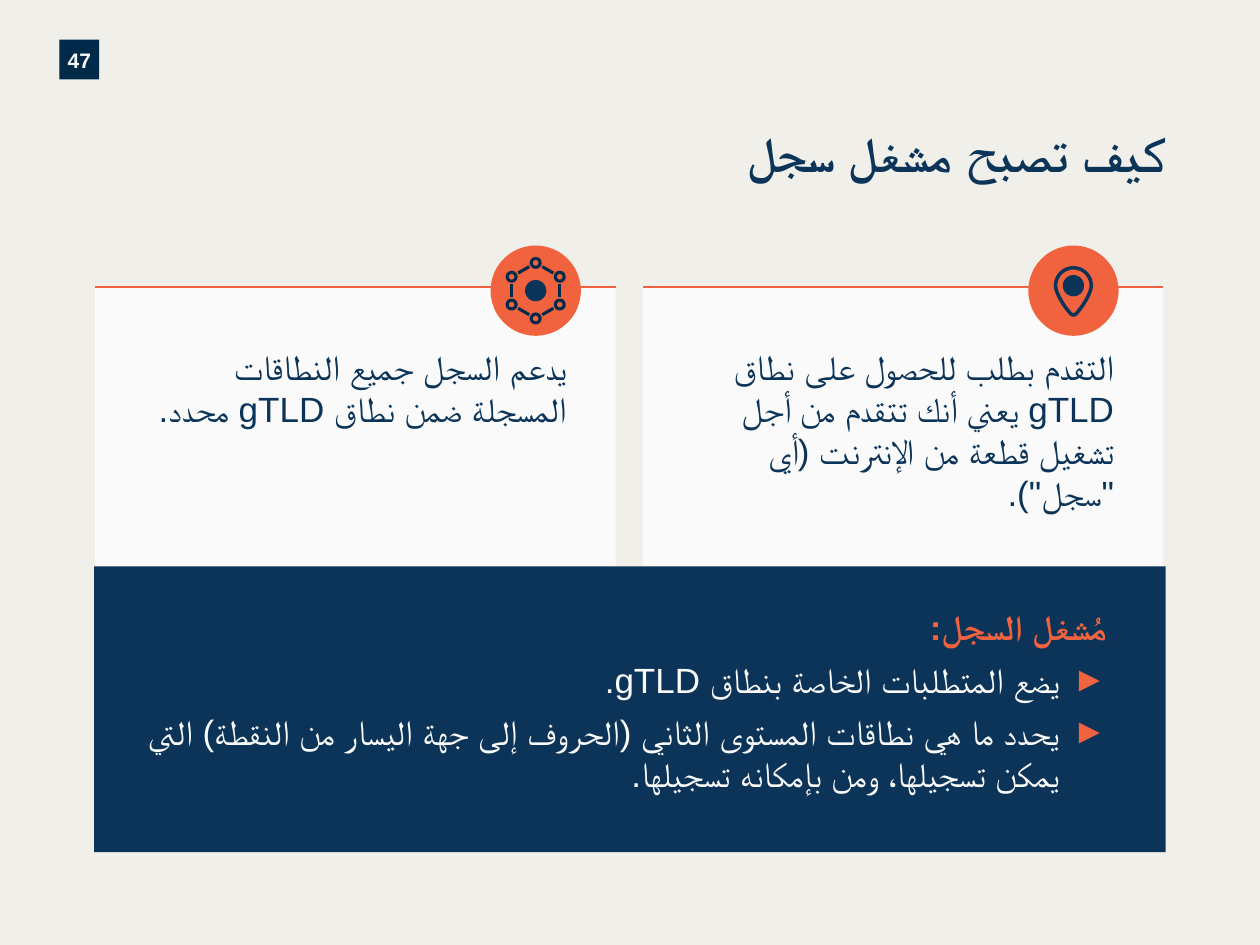
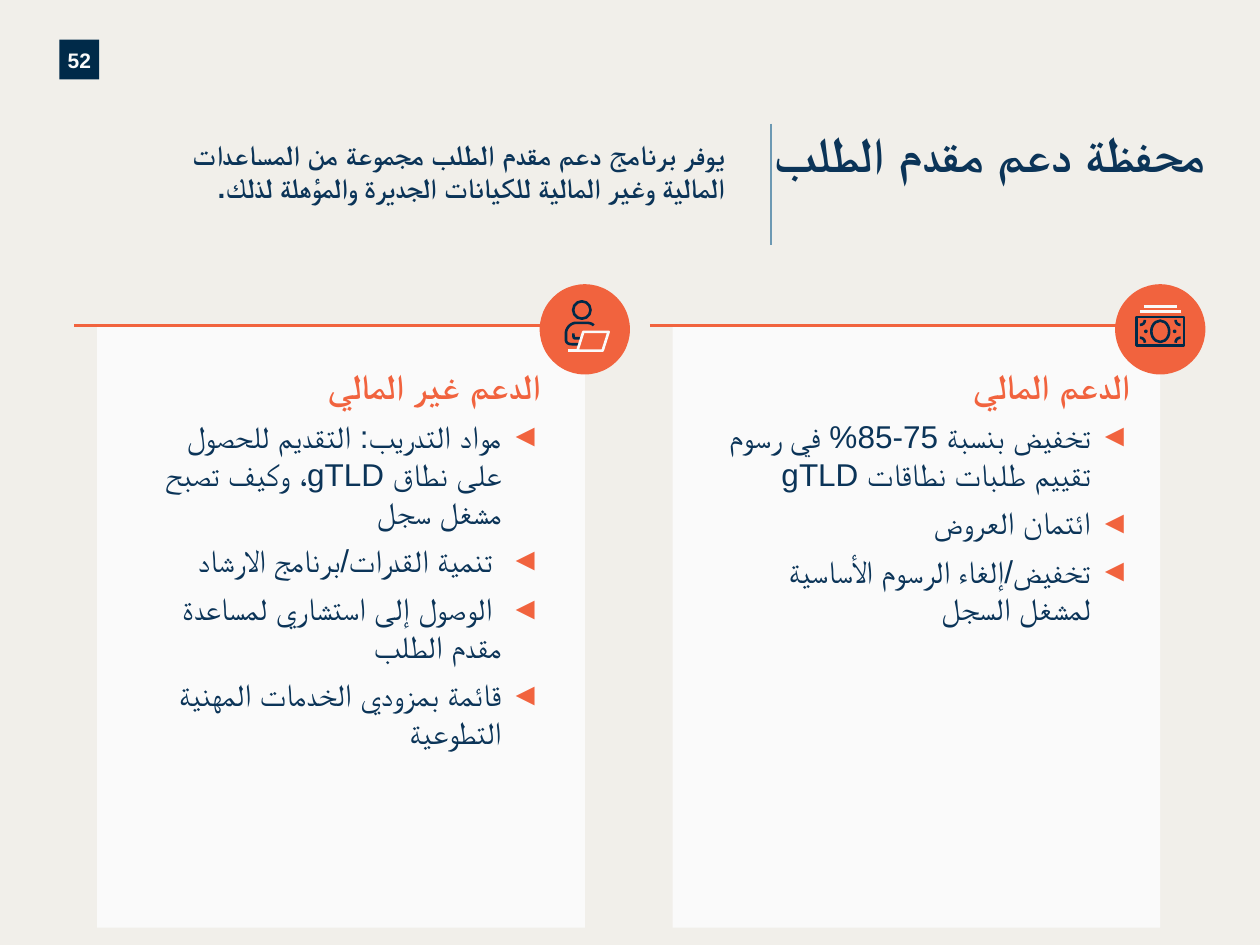
from dataclasses import dataclass
from math import cos, pi, sin

from lxml.etree import SubElement
from pptx import Presentation
from pptx.dml.color import RGBColor
from pptx.enum.shapes import MSO_CONNECTOR, MSO_SHAPE
from pptx.enum.text import MSO_ANCHOR, PP_ALIGN
from pptx.oxml.ns import qn
from pptx.util import Cm, Pt

PAPER = RGBColor(0xF1, 0xEF, 0xEA)
WHITE = RGBColor(0xFA, 0xFA, 0xFA)
NAVY = RGBColor(0x0B, 0x34, 0x58)
INK = RGBColor(0x00, 0x2A, 0x49)
ORANGE = RGBColor(0xF1, 0x63, 0x3E)
STEEL = RGBColor(0x6D, 0x99, 0xB3)
FONT = "Arial"
BADGE_SIZE = 1.82
BADGE_DROP = 0.08


@dataclass
class Box:
    """A rectangle in centimetres."""
    left: float
    top: float
    width: float
    height: float

    @property
    def right(self):
        return self.left + self.width

    def lengths(self):
        return [Cm(n) for n in (self.left, self.top, self.width, self.height)]


@dataclass
class Line:
    """One Arabic paragraph and its look."""
    text: str
    size: int = 20
    colour: RGBColor = NAVY
    bold: bool = False
    bullet: str = ""
    hang: float = 0


def paint(shape, fill=None, line=None, weight=1.5):
    shape.shadow.inherit = False
    if fill is None:
        shape.fill.background()
    else:
        shape.fill.solid()
        shape.fill.fore_color.rgb = fill
    if line is None:
        shape.line.fill.background()
    else:
        shape.line.color.rgb = line
        shape.line.width = Pt(weight)


def add_shape(page, kind, box, **look):
    shape = page.shapes.add_shape(kind, *box.lengths())
    paint(shape, **look)
    return shape


def add_oval(page, x, y, width, height=None, **look):
    """An ellipse centred on x, y."""
    height = height or width
    box = Box(x - width / 2, y - height / 2, width, height)
    return add_shape(page, MSO_SHAPE.OVAL, box, **look)


def add_line(page, start, end, colour, weight=1.25):
    line = page.shapes.add_connector(
        MSO_CONNECTOR.STRAIGHT, *(Cm(n) for n in (*start, *end)))
    line.line.color.rgb = colour
    line.line.width = Pt(weight)
    SubElement(line._element.spPr, qn("a:effectLst"))


def curve(*controls, steps=10):
    """Points along a cubic curve through four control points."""
    points = []
    for step in range(steps + 1):
        t = step / steps
        weights = ((1 - t) ** 3, 3 * t * (1 - t) ** 2, 3 * t * t * (1 - t), t ** 3)
        points.append(tuple(sum(w * point[axis] for w, point in zip(weights, controls))
                            for axis in (0, 1)))
    return points


def add_outline(page, x, y, points, colour, weight=1.5, close=False):
    """An unfilled path whose points are offsets from x, y."""
    places = [(Cm(x + dx), Cm(y + dy)) for dx, dy in points]
    builder = page.shapes.build_freeform(*places[0])
    builder.add_line_segments(places[1:], close=close)
    paint(builder.convert_to_shape(), line=colour, weight=weight)


def set_insets(frame, left, top, right, bottom):
    frame.margin_left, frame.margin_top = Cm(left), Cm(top)
    frame.margin_right, frame.margin_bottom = Cm(right), Cm(bottom)
    frame.word_wrap = True


def add_bullet(para, line):
    props = para._p.get_or_add_pPr()
    props.set("marL", str(Cm(line.hang)))
    props.set("indent", str(-Cm(line.hang)))
    para.space_before = Pt(6)
    colour = SubElement(props, qn("a:buClr"))
    SubElement(colour, qn("a:srgbClr")).set("val", str(ORANGE))
    SubElement(props, qn("a:buFont")).set("typeface", FONT)
    SubElement(props, qn("a:buChar")).set("char", line.bullet)


def write(frame, lines, insets=(0, 0, 0, 0)):
    """Fill a frame with right-to-left paragraphs."""
    set_insets(frame, *insets)
    frame.vertical_anchor = MSO_ANCHOR.TOP
    for index, line in enumerate(lines):
        para = frame.add_paragraph() if index else frame.paragraphs[0]
        para.text = line.text
        para.alignment = PP_ALIGN.RIGHT
        para._p.get_or_add_pPr().set("rtl", "1")
        if line.bullet:
            add_bullet(para, line)
        for span in para.runs:
            font = span.font
            font.name, font.size, font.bold = FONT, Pt(line.size), line.bold
            font.color.rgb = line.colour
            SubElement(font._element, qn("a:cs")).set("typeface", FONT)


def add_text(page, box, line):
    write(page.shapes.add_textbox(*box.lengths()).text_frame, [line])


def add_page(deck, number):
    page = deck.slides.add_slide(deck.slide_layouts[6])
    page.background.fill.solid()
    page.background.fill.fore_color.rgb = PAPER
    marker = add_shape(page, MSO_SHAPE.RECTANGLE, Box(1.2, 0.8, 0.8, 0.8), fill=INK)
    frame = marker.text_frame
    set_insets(frame, 0, 0, 0, 0)
    frame.vertical_anchor = MSO_ANCHOR.MIDDLE
    frame.text = str(number)
    para = frame.paragraphs[0]
    para.alignment = PP_ALIGN.CENTER
    para.line_spacing = 1.08
    font = para.runs[0].font
    font.name, font.size, font.bold = FONT, Pt(12), True
    font.color.rgb = WHITE
    return page


def add_title(page, box, text):
    add_text(page, box, Line(text, 28, bold=True))


def add_panel(page, box, fill, lines, insets):
    panel = add_shape(page, MSO_SHAPE.RECTANGLE, box, fill=fill)
    write(panel.text_frame, lines, insets)


def add_card(page, box, lines, insets, draw_icon, badge_inset=0, overhang=0):
    """A white panel with an orange rule on top and a round badge near its right end."""
    add_panel(page, box, WHITE, lines, insets)
    add_line(page, (box.left - overhang, box.top), (box.right, box.top), ORANGE)
    x, y = box.right - badge_inset, box.top + BADGE_DROP
    add_oval(page, x, y, BADGE_SIZE, fill=ORANGE)
    draw_icon(page, x, y)


def draw_network(page, x, y):
    nodes = [(x + 0.56 * sin(k * pi / 3), y - 0.56 * cos(k * pi / 3)) for k in range(6)]
    for (ax, ay), (bx, by) in zip(nodes, nodes[1:] + nodes[:1]):
        start, end = [(ax + (bx - ax) * part, ay + (by - ay) * part)
                      for part in (0.27, 0.73)]
        add_line(page, start, end, INK, 1.75)
    for node in nodes:
        add_oval(page, *node, 0.18, line=INK, weight=1.75)
    add_oval(page, x, y, 0.43, fill=NAVY)


def draw_pin(page, x, y):
    add_oval(page, x, y - 0.1, 0.43, fill=NAVY)
    left_half = (curve((0, 0.49), (-0.02, 0.49), (-0.04, 0.48), (-0.06, 0.46))
                 + curve((-0.06, 0.46), (-0.18, 0.33), (-0.36, 0.05), (-0.36, -0.1))
                 + curve((-0.36, -0.1), (-0.36, -0.3), (-0.2, -0.46), (0, -0.46)))
    right_half = [(-dx, dy) for dx, dy in reversed(left_half)]
    add_outline(page, x, y, left_half + right_half, NAVY, 2, close=True)


def draw_person(page, x, y):
    add_oval(page, x - 0.06, y - 0.39, 0.35, line=INK)
    arm = [(-0.08, 0.18)] + curve((-0.2, 0.18), (-0.22, 0.18), (-0.23, 0.17), (-0.23, 0.08))
    body = (curve((0.18, -0.08), (0.15, -0.11), (0.1, -0.13), (0.05, -0.13))
            + curve((-0.18, -0.13), (-0.28, -0.13), (-0.38, -0.03), (-0.38, 0.08))
            + curve((-0.38, 0.2), (-0.38, 0.28), (-0.33, 0.3), (-0.25, 0.3))
            + [(-0.1, 0.3)])
    for limb in (arm, body):
        add_outline(page, x, y, limb, INK)
    add_line(page, (x - 0.33, y + 0.43), (x - 0.15, y + 0.43), WHITE, 1.5)
    screen = [(-0.03, 0.05), (0.48, 0.05), (0.36, 0.43), (-0.15, 0.43)]
    add_outline(page, x, y, screen, WHITE, close=True)


def draw_banknote(page, x, y):
    middle = y + 0.04
    add_shape(page, MSO_SHAPE.RECTANGLE, Box(x - 0.48, middle - 0.29, 0.96, 0.58), line=INK)
    add_oval(page, x, middle, 0.36, 0.43, line=INK)
    for side in (-1, 1):
        add_oval(page, x + side * 0.29, middle, 0.02, line=INK)
        for end in (-1, 1):
            corner = curve((0, -0.1 * end), (-0.06 * side, -0.1 * end),
                           (-0.1 * side, -0.06 * end), (-0.1 * side, 0))
            add_outline(page, x + side * 0.41, middle + end * 0.23, corner, INK)
    for reach, rise in ((0.41, 0.36), (0.33, 0.46)):
        add_line(page, (x - reach, y - rise), (x + reach, y - rise), WHITE, 1.5)


def build_operator_page(deck):
    page = add_page(deck, 47)
    add_title(page, Box(1.2, 2.49, 22.3, 1.32), "كيف تصبح مشغل سجل")
    cards = [
        (12.96, 1.81, draw_pin,
         'التقدم بطلب للحصول على نطاق gTLD يعني أنك تتقدم من أجل تشغيل قطعة من '
         'الإنترنت (أي "سجل").'),
        (1.92, 1.61, draw_network,
         "يدعم السجل جميع النطاقات المسجلة ضمن نطاق gTLD محدد."),
    ]
    for left, badge_inset, icon, text in cards:
        add_card(page, Box(left, 5.78, 10.49, 5.64), [Line(text)],
                 (0.89, 1.19, 0.99, 0.76), icon, badge_inset)
    duties = [
        "يضع المتطلبات الخاصة بنطاق gTLD.",
        "يحدد ما هي نطاقات المستوى الثاني (الحروف إلى جهة اليسار من النقطة) التي "
        "يمكن تسجيلها، ومن بإمكانه تسجيلها.",
    ]
    lines = [Line("مُشغل السجل:", colour=ORANGE, bold=True)]
    lines += [Line(duty, colour=WHITE, bullet="►", hang=0.95) for duty in duties]
    add_panel(page, Box(1.9, 11.42, 21.6, 5.76), NAVY, lines, (0.89, 0.79, 1.19, 0.76))


def build_support_page(deck):
    page = add_page(deck, 52)
    add_title(page, Box(15.34, 2.49, 8.97, 2.34), "محفظة دعم مقدم الطلب")
    add_text(page, Box(2.65, 2.77, 11.96, 1.37), Line(
        "يوفر برنامج دعم مقدم الطلب مجموعة من المساعدات المالية وغير المالية "
        "للكيانات الجديرة والمؤهلة لذلك.", 16, bold=True))
    add_line(page, (15.54, 2.49), (15.54, 4.94), STEEL)
    cards = [
        (1.96, 0.89, draw_person, "الدعم غير المالي", [
            "مواد التدريب: التقديم للحصول \nعلى نطاق gTLD، وكيف تصبح مشغل سجل",
            " تنمية القدرات/برنامج الارشاد",
            " الوصول إلى استشاري لمساعدة مقدم الطلب",
            "قائمة بمزودي الخدمات المهنية التطوعية"]),
        (13.56, 0.61, draw_banknote, "الدعم المالي", [
            "تخفيض بنسبة 75-85% في رسوم تقييم طلبات نطاقات gTLD",
            "ائتمان العروض",
            "تخفيض/إلغاء الرسوم الأساسية \nلمشغل السجل"]),
    ]
    for left, right_inset, icon, heading, items in cards:
        lines = [Line(heading, colour=ORANGE, bold=True)]
        lines += [Line(item, 18, bullet="◄", hang=0.79) for item in items]
        add_card(page, Box(left, 6.56, 9.83, 12.14), lines,
                 (0.79, 0.79, right_inset, 0.76), icon, overhang=0.46)


def main():
    deck = Presentation()
    deck.slide_width, deck.slide_height = Cm(25.4), Cm(19.05)
    build_operator_page(deck)
    build_support_page(deck)
    deck.save("out.pptx")


if __name__ == "__main__":
    main()
